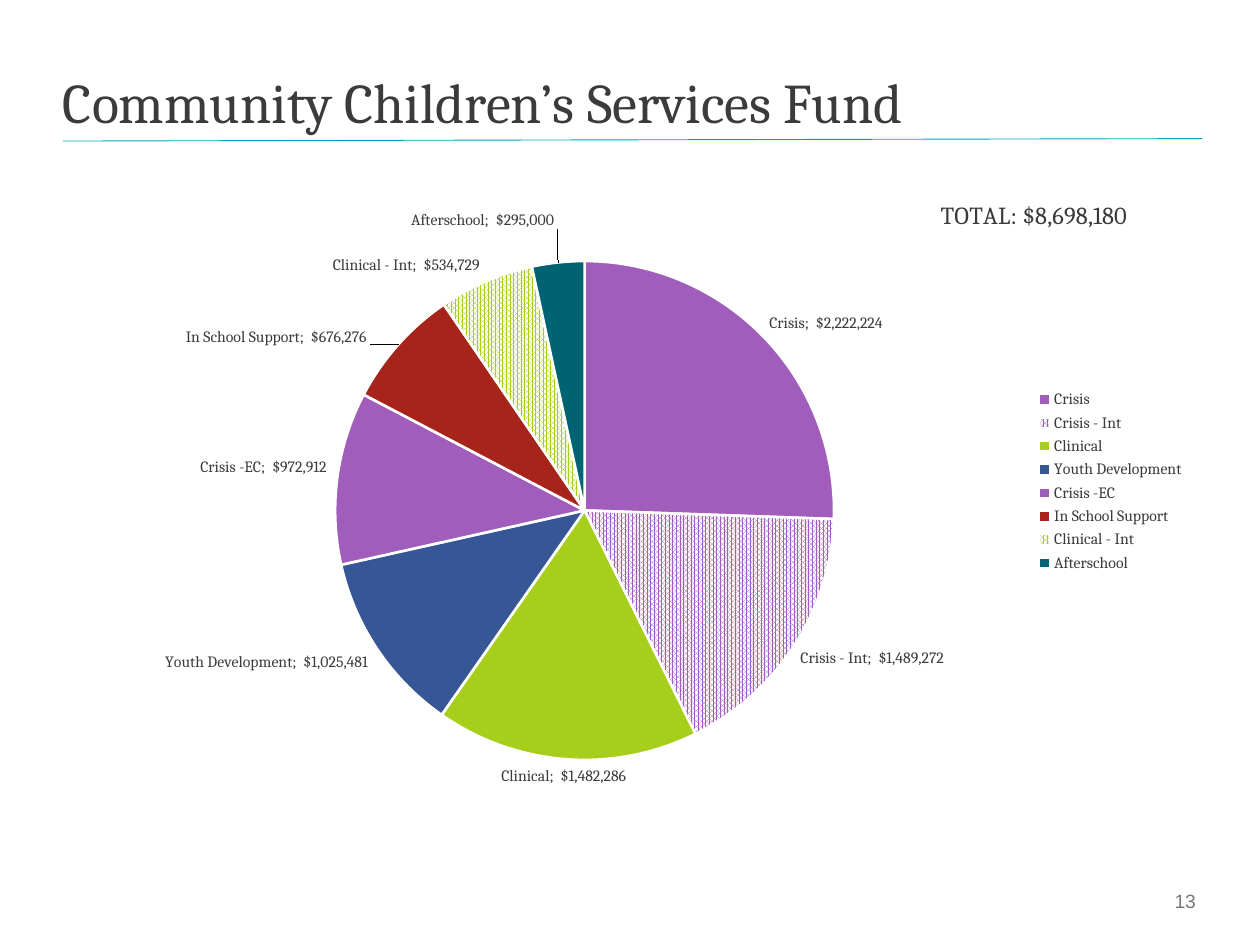
from copy import deepcopy

from lxml import etree
from pptx import Presentation
from pptx.chart.data import CategoryChartData
from pptx.dml.color import RGBColor
from pptx.enum.chart import XL_CHART_TYPE as ChartType
from pptx.enum.chart import XL_LABEL_POSITION as LabelPos
from pptx.enum.chart import XL_LEGEND_POSITION as LegendPos
from pptx.enum.dml import MSO_PATTERN as Pattern
from pptx.enum.shapes import MSO_CONNECTOR as Connector
from pptx.enum.text import MSO_ANCHOR as Anchor
from pptx.enum.text import PP_ALIGN as Align
from pptx.oxml import parse_xml
from pptx.oxml.ns import nsdecls, qn
from pptx.util import Pt

INK = RGBColor(0x3B, 0x3B, 0x3B)
GREY = RGBColor(0x77, 0x78, 0x77)
WHITE = RGBColor(0xFF, 0xFF, 0xFF)
RULE = RGBColor(0x00, 0xA5, 0xC1)
PURPLE = RGBColor(0xA0, 0x5D, 0xBB)
GREEN = RGBColor(0xA6, 0xCE, 0x1B)
BLUE = RGBColor(0x36, 0x56, 0x95)
RED = RGBColor(0xA7, 0x24, 0x1B)
TEAL = RGBColor(0x00, 0x63, 0x74)

DOLLARS = r'_("$"* #,##0_);_("$"* \(#,##0\);_("$"* "-"??_);_(@_)'

# Programme, amount, colour, patterned
FUNDS = [
    ("Crisis", 2222224, PURPLE, False),
    ("Crisis - Int", 1489272, PURPLE, True),
    ("Clinical", 1482286, GREEN, False),
    ("Youth Development", 1025481, BLUE, False),
    ("Crisis -EC", 972912, PURPLE, False),
    ("In School Support", 676276, RED, False),
    ("Clinical - Int", 534729, GREEN, True),
    ("Afterschool", 295000, TEAL, False),
]
# Labels moved off their default place, as fractions of the chart
LABEL_SHIFTS = {5: (-0.02, 0.01), 7: (0, -0.04)}


def style_font(font, size, color=INK, name="Cambria"):
    font.size, font.name = Pt(size), name
    font.color.rgb = color


def add_text(slide, box, text, size, color=INK, name="Cambria"):
    frame = slide.shapes.add_textbox(*map(Pt, box)).text_frame
    frame.word_wrap = True
    para = frame.paragraphs[0]
    run = para.add_run()
    run.text = text
    style_font(run.font, size, color, name)
    return frame, para


def chart_layout(**values):
    items = "".join(f'<c:{tag} val="{value}"/>' for tag, value in values.items())
    return parse_xml(f'<c:layout {nsdecls("c")}><c:manualLayout>{items}'
                     '</c:manualLayout></c:layout>')


def replace_layout(parent, index, layout):
    for old in parent.findall(qn("c:layout")):
        parent.remove(old)
    parent.insert(index, layout)


def add_header(slide, box):
    left, top, width, height = box
    frame, para = add_text(slide, box, "Community Children’s Services Fund", 32)
    frame.margin_left = frame.margin_right = 0
    frame.margin_top = frame.margin_bottom = 0
    frame.vertical_anchor = Anchor.BOTTOM
    para.line_spacing = Pt(33)

    # Rule under the title
    base = top + height
    rule = slide.shapes.add_connector(
        Connector.STRAIGHT, Pt(left), Pt(base + 3.6), Pt(left + width + 3), Pt(base + 2.2))
    rule.line.color.rgb = RULE
    rule.line.width = Pt(0.5)
    etree.SubElement(rule._element.spPr, qn("a:effectLst"))


def add_page_number(slide, box):
    frame, para = add_text(slide, box, "13", 11, GREY, "Arial")
    frame.vertical_anchor = Anchor.MIDDLE
    para.alignment = Align.RIGHT
    para.space_after = Pt(6)


def add_labels(series):
    labels = series.data_labels
    labels.show_value = labels.show_category_name = True
    labels.show_percentage = labels.show_legend_key = False
    labels.number_format, labels.number_format_is_linked = DOLLARS, False
    labels.position = LabelPos.OUTSIDE_END
    style_font(labels.font, 9)

    group = labels._element
    separator = etree.Element(qn("c:separator"))
    separator.text = "; "
    flags = [child for child in group if child.tag.startswith(qn("c:show"))
             and child.tag != qn("c:showLeaderLines")]
    flags[-1].addnext(separator)

    # Moved labels share the settings of the whole group
    shared = [child for child in group if child.tag != qn("c:showLeaderLines")]
    for place, (index, (dx, dy)) in enumerate(LABEL_SHIFTS.items()):
        moved = parse_xml(f'<c:dLbl {nsdecls("c")}><c:idx val="{index}"/></c:dLbl>')
        moved.append(chart_layout(x=dx, y=dy))
        moved.extend(deepcopy(child) for child in shared)
        group.insert(place, moved)


def add_fund_chart(slide, box):
    data = CategoryChartData(number_format=DOLLARS)
    data.categories = [fund[0] for fund in FUNDS]
    data.add_series("Series 1", [fund[1] for fund in FUNDS])
    chart = slide.shapes.add_chart(ChartType.PIE, *map(Pt, box), data).chart
    style_font(chart.font, 10)

    # Total as chart title
    chart.has_title = True
    total = chart.chart_title.text_frame.paragraphs[0].add_run()
    total.text = "TOTAL: $8,698,180"
    style_font(total.font, 14)
    total.font.bold = False
    replace_layout(chart.chart_title._element, 1,
                   chart_layout(xMode="edge", yMode="edge", x=0.77, y=0.06))

    # Slices
    plot = chart.plots[0]
    plot.vary_by_categories = True
    series = plot.series[0]
    for index, (_, _, color, patterned) in enumerate(FUNDS):
        form = series.points[index].format
        if patterned:
            form.fill.patterned()
            form.fill.pattern = Pattern.PERCENT_80
            form.fill.fore_color.rgb = color
            form.fill.back_color.rgb = WHITE
        else:
            form.fill.solid()
            form.fill.fore_color.rgb = color
        form.line.color.rgb = WHITE
        form.line.width = Pt(1.5)
    add_labels(series)
    plot_area = chart._chartSpace.find(".//" + qn("c:plotArea"))
    replace_layout(plot_area, 0, chart_layout(
        layoutTarget="inner", xMode="edge", yMode="edge", x=0.24, y=0.16, w=0.44, h=0.77))

    # Legend
    chart.has_legend = True
    chart.legend.position = LegendPos.RIGHT
    chart.legend.include_in_layout = False
    style_font(chart.legend.font, 9)


def main():
    deck = Presentation()
    deck.slide_width, deck.slide_height = Pt(720), Pt(540)
    slide = deck.slides.add_slide(deck.slide_layouts[6])
    add_header(slide, (36, 10, 648, 67))
    add_page_number(slide, (522.7, 500.4, 167.8, 28.8))
    add_fund_chart(slide, (36, 89.3, 648, 371.5))
    deck.save("out.pptx")


if __name__ == "__main__":
    main()
